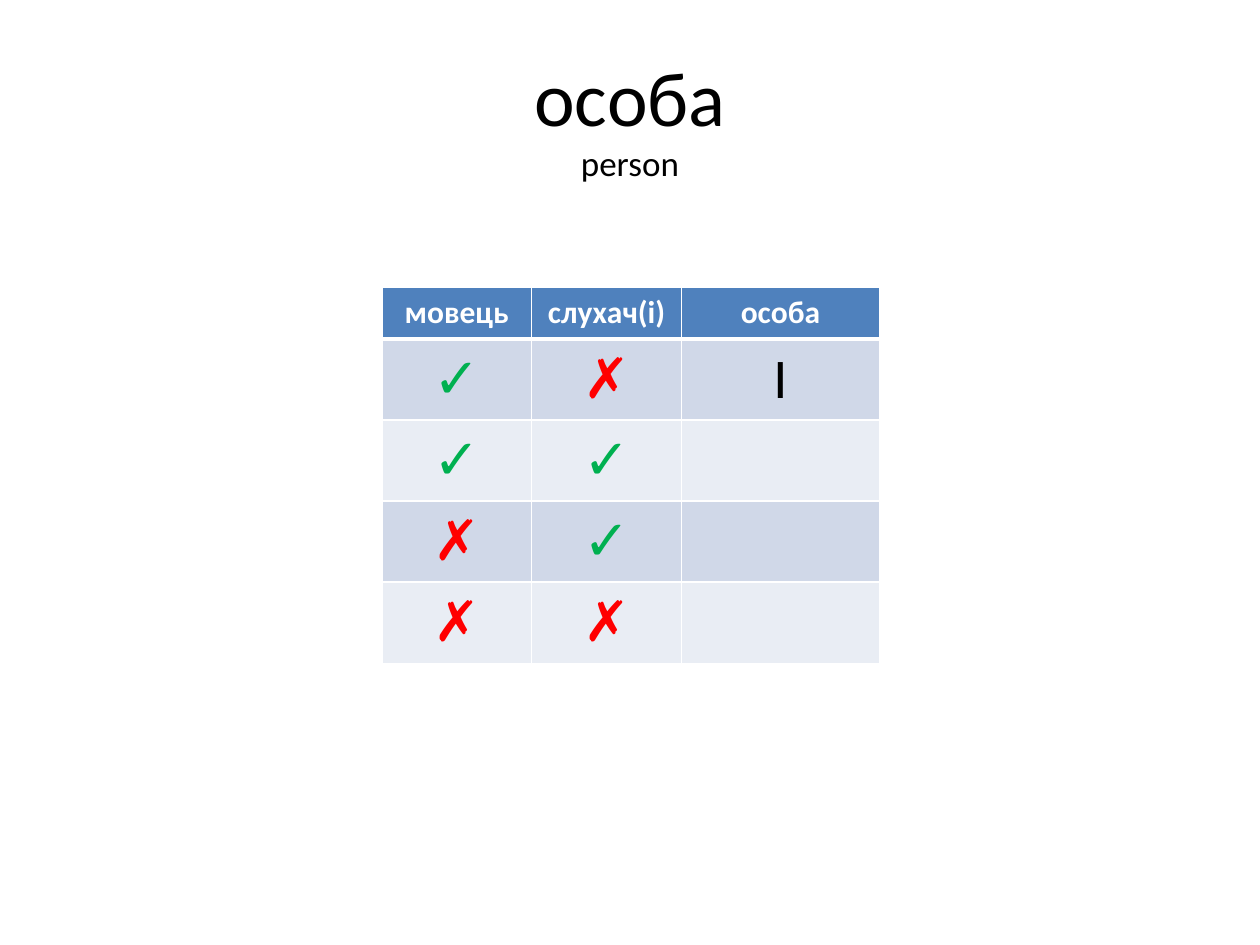
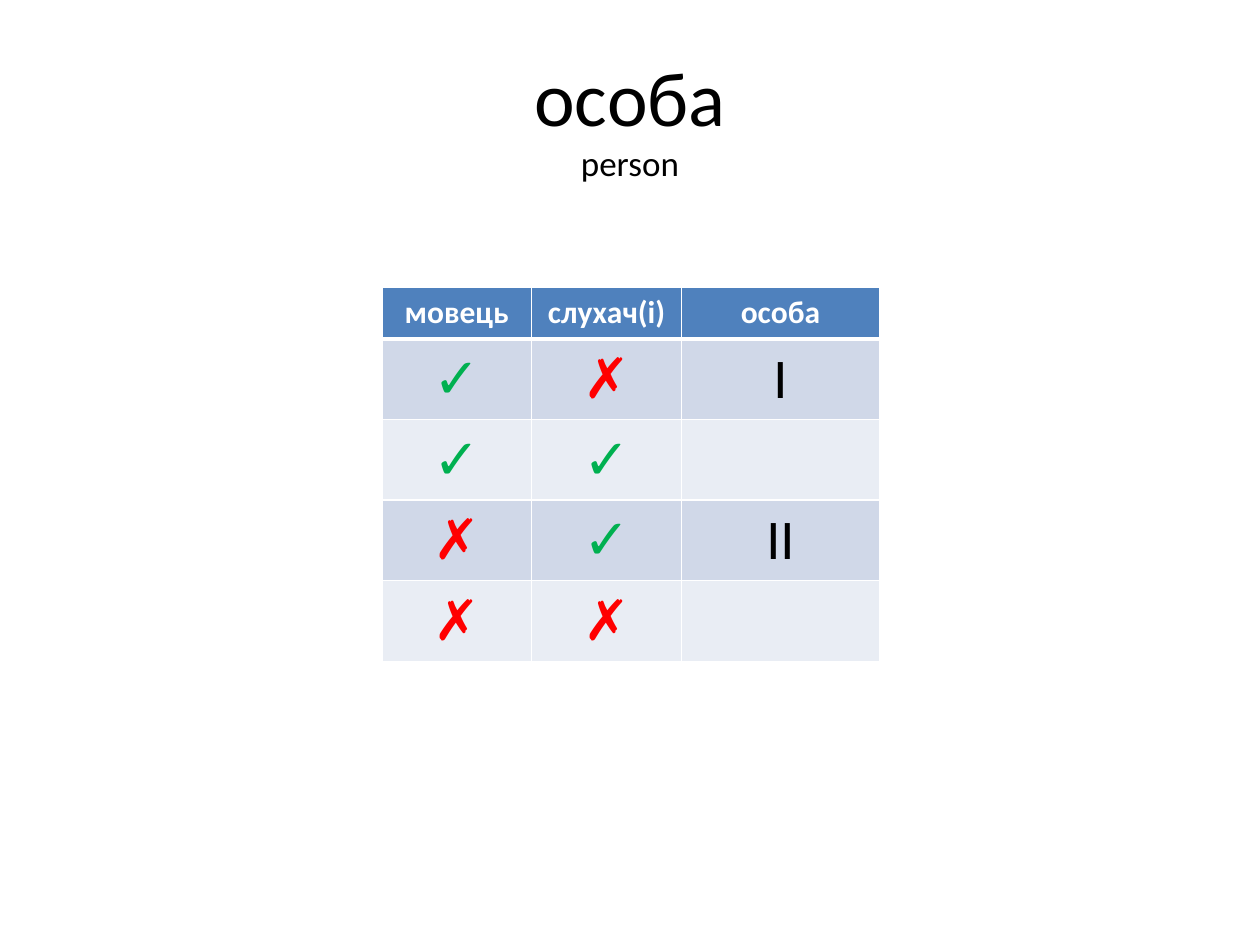
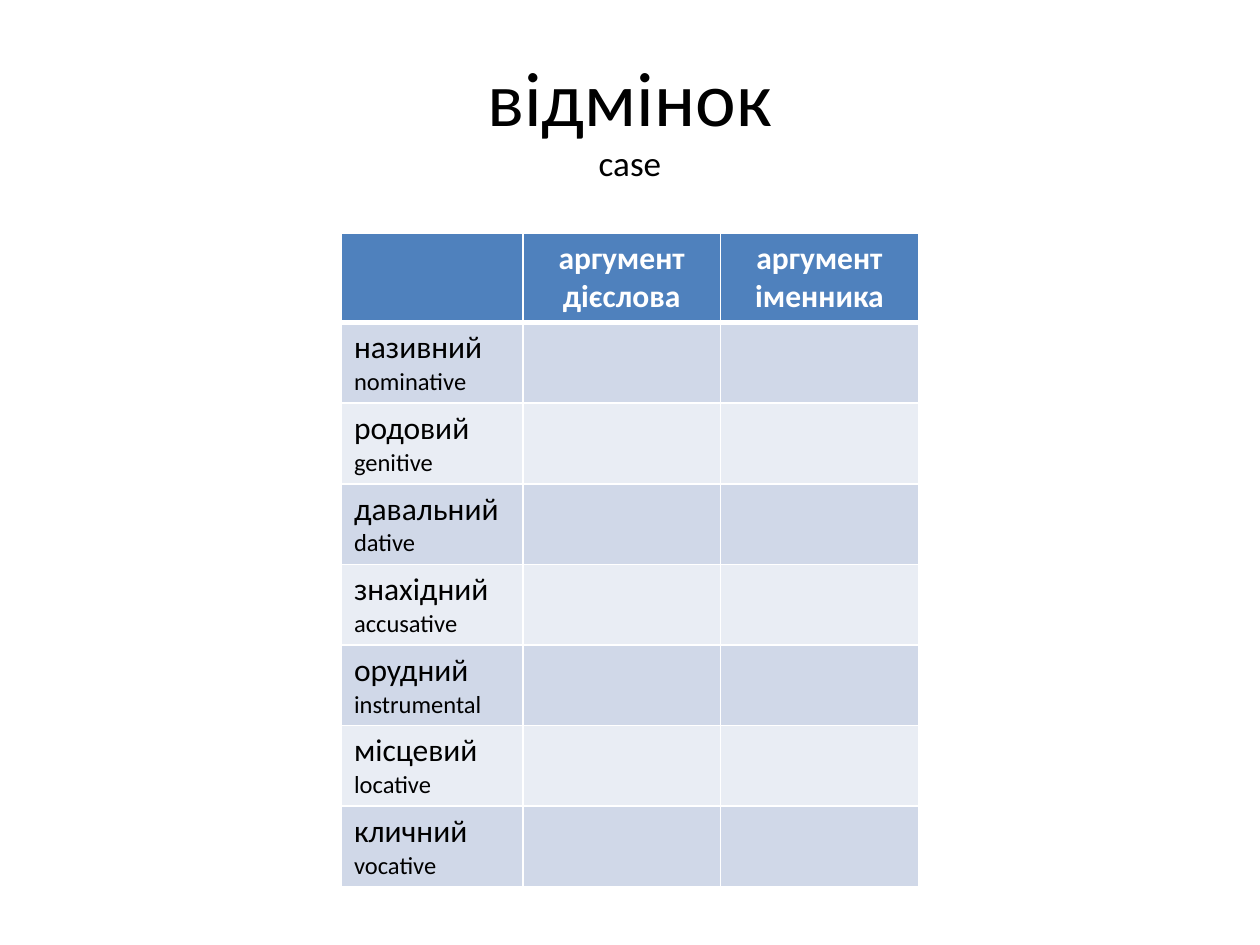
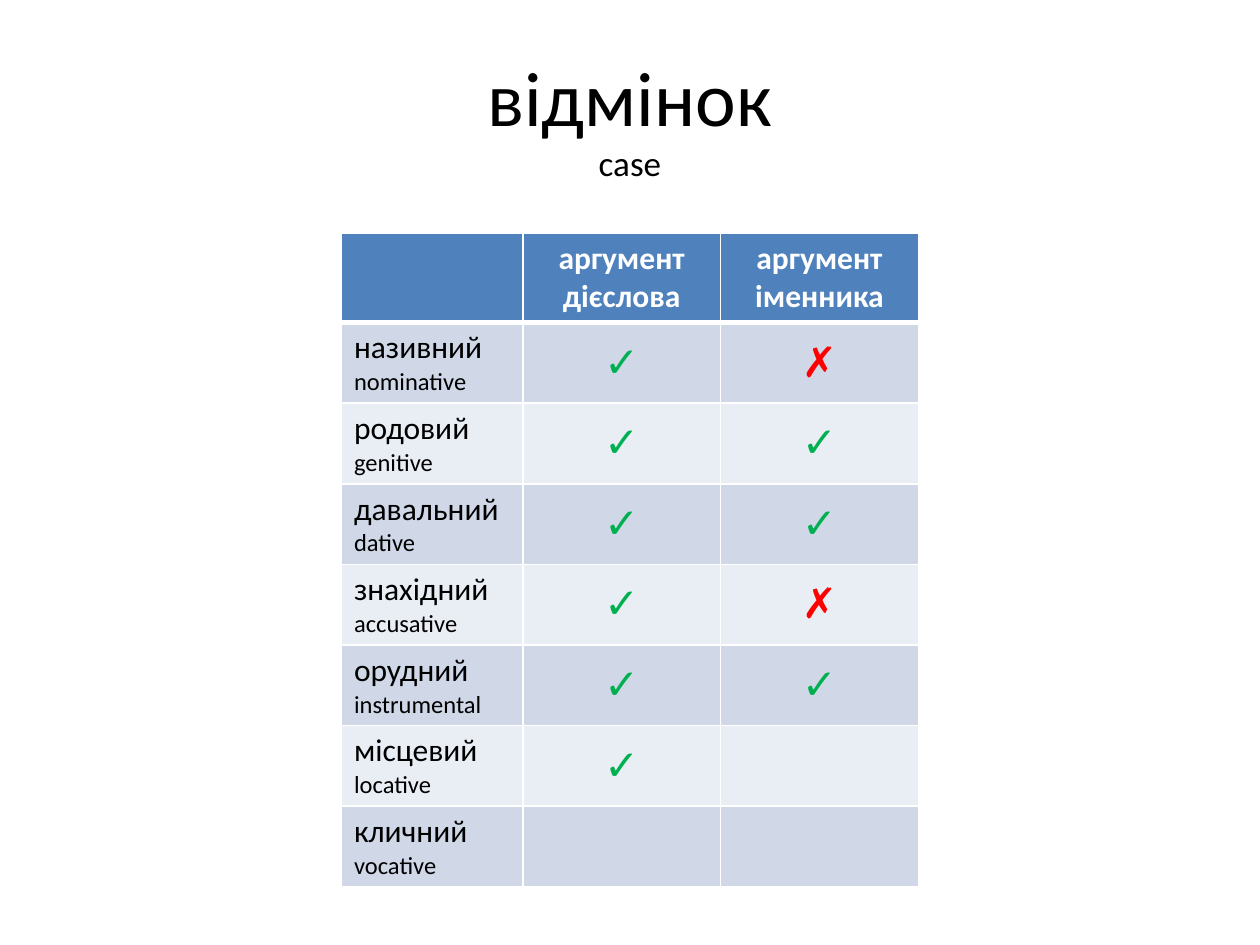
from lxml.etree import SubElement
from pptx import Presentation
from pptx.dml.color import RGBColor
from pptx.enum.text import MSO_ANCHOR, PP_ALIGN
from pptx.oxml.ns import qn
from pptx.util import Inches, Pt

FONT = "Calibri"
BLACK = RGBColor(0x00, 0x00, 0x00)
WHITE = RGBColor(0xFF, 0xFF, 0xFF)
HEADER_BLUE = RGBColor(0x4F, 0x81, 0xBD)
BAND_DARK = RGBColor(0xD0, 0xD8, 0xE8)
BAND_LIGHT = RGBColor(0xE9, 0xED, 0xF4)
YES, NO = "✓", "✗"
MARK_COLORS = {YES: RGBColor(0x00, 0xB0, 0x50), NO: RGBColor(0xFF, 0x00, 0x00)}

TITLE_BOX = (0.5, 0.3, 9, 1.25)
BODY_ROW = 0.64
THIN, THICK = 1, 3

PERSON_HEADERS = ("мовець", "слухач(і)", "особа")
PERSON_MARKS = ((YES, NO), (YES, YES), (NO, YES), (NO, NO))
CASE_HEADERS = ("", "аргумент\vдієслова", "аргумент\vіменника")
CASE_NAMES = (
    "називний\nnominative",
    "родовий\vgenitive",
    "давальний\ndative",
    "знахідний\naccusative",
    "орудний\ninstrumental",
    "місцевий\nlocative",
    "кличний\nvocative",
)
CASE_MARKS = ((YES, NO), (YES, YES), (YES, YES), (YES, NO), (YES, YES), (YES, ""), ("", ""))


def write(frame, text, sizes, color=BLACK, bold=False, align=PP_ALIGN.CENTER):
    """Fill the frame; each line takes the next size, the last size repeating."""
    frame.text = text
    spans = []
    for para in frame.paragraphs:
        para.alignment = align
        spans.extend(para.runs)
    for index, span in enumerate(spans):
        font = span.font
        font.name, font.bold = FONT, bold
        font.size = Pt(sizes[min(index, len(sizes) - 1)])
        font.color.rgb = color


def add_title(page, box, name, translation):
    frame = page.shapes.add_textbox(*map(Inches, box)).text_frame
    frame.word_wrap = True
    frame.vertical_anchor = MSO_ANCHOR.MIDDLE
    write(frame, f"{name}\v{translation}", (44, 20))


def set_borders(cell, top, bottom):
    properties = cell._tc.get_or_add_tcPr()
    for side, width in (("L", THIN), ("R", THIN), ("T", top), ("B", bottom)):
        line = SubElement(properties, qn(f"a:ln{side}"), w=str(Pt(width)))
        fill = SubElement(line, qn("a:solidFill"))
        SubElement(fill, qn("a:srgbClr"), val=str(WHITE))


def style_cell(cell, row):
    set_borders(cell, THICK if row == 1 else THIN, THICK if row == 0 else THIN)
    cell.vertical_anchor = MSO_ANCHOR.MIDDLE
    cell.fill.solid()
    banded = BAND_DARK if row % 2 else BAND_LIGHT
    cell.fill.fore_color.rgb = banded if row else HEADER_BLUE


def write_cell(cell, text, row, mark_size):
    if row == 0:
        write(cell.text_frame, text, (18,), WHITE, bold=True)
    elif text in CASE_NAMES:
        write(cell.text_frame, text, (18, 14), align=PP_ALIGN.LEFT)
    else:
        color = MARK_COLORS.get(text, BLACK)
        write(cell.text_frame, text, (mark_size,), color, bold=text in MARK_COLORS)


def add_grid(page, corner, widths, header_height, rows, mark_size):
    left, top = corner
    height = header_height + BODY_ROW * (len(rows) - 1)
    frame = page.shapes.add_table(
        len(rows), len(widths), Inches(left), Inches(top), Inches(sum(widths)), Inches(height)
    )
    table = frame.table
    table.horz_banding = False
    for column, width in zip(table.columns, widths):
        column.width = Inches(width)
    for row, texts in enumerate(rows):
        table.rows[row].height = Inches(BODY_ROW if row else header_height)
        for column, text in enumerate(texts):
            cell = table.cell(row, column)
            style_cell(cell, row)
            if text:
                write_cell(cell, text, row, mark_size)


def add_page(deck):
    return deck.slides.add_slide(deck.slide_layouts[6])


def person_slide(deck, persons):
    page = add_page(deck)
    rows = [PERSON_HEADERS]
    rows += [(*marks, person) for marks, person in zip(PERSON_MARKS, persons)]
    add_grid(page, (3.03, 2.28), (1.19, 1.19, 1.57), 0.41, rows, mark_size=32)
    add_title(page, TITLE_BOX, "особа", "person")


def case_slide(deck, case_marks):
    page = add_page(deck)
    add_title(page, TITLE_BOX, "відмінок", "case")
    rows = [CASE_HEADERS]
    rows += [(name, *marks) for name, marks in zip(CASE_NAMES, case_marks)]
    add_grid(page, (2.71, 1.85), (1.44, 1.57, 1.57), 0.71, rows, mark_size=24)


def main():
    deck = Presentation()
    deck.slide_width, deck.slide_height = Inches(10), Inches(7.5)
    person_slide(deck, ("I", "", "", ""))
    person_slide(deck, ("I", "", "II", ""))
    case_slide(deck, [("", "")] * len(CASE_NAMES))
    case_slide(deck, CASE_MARKS)
    deck.save("out.pptx")


if __name__ == "__main__":
    main()
